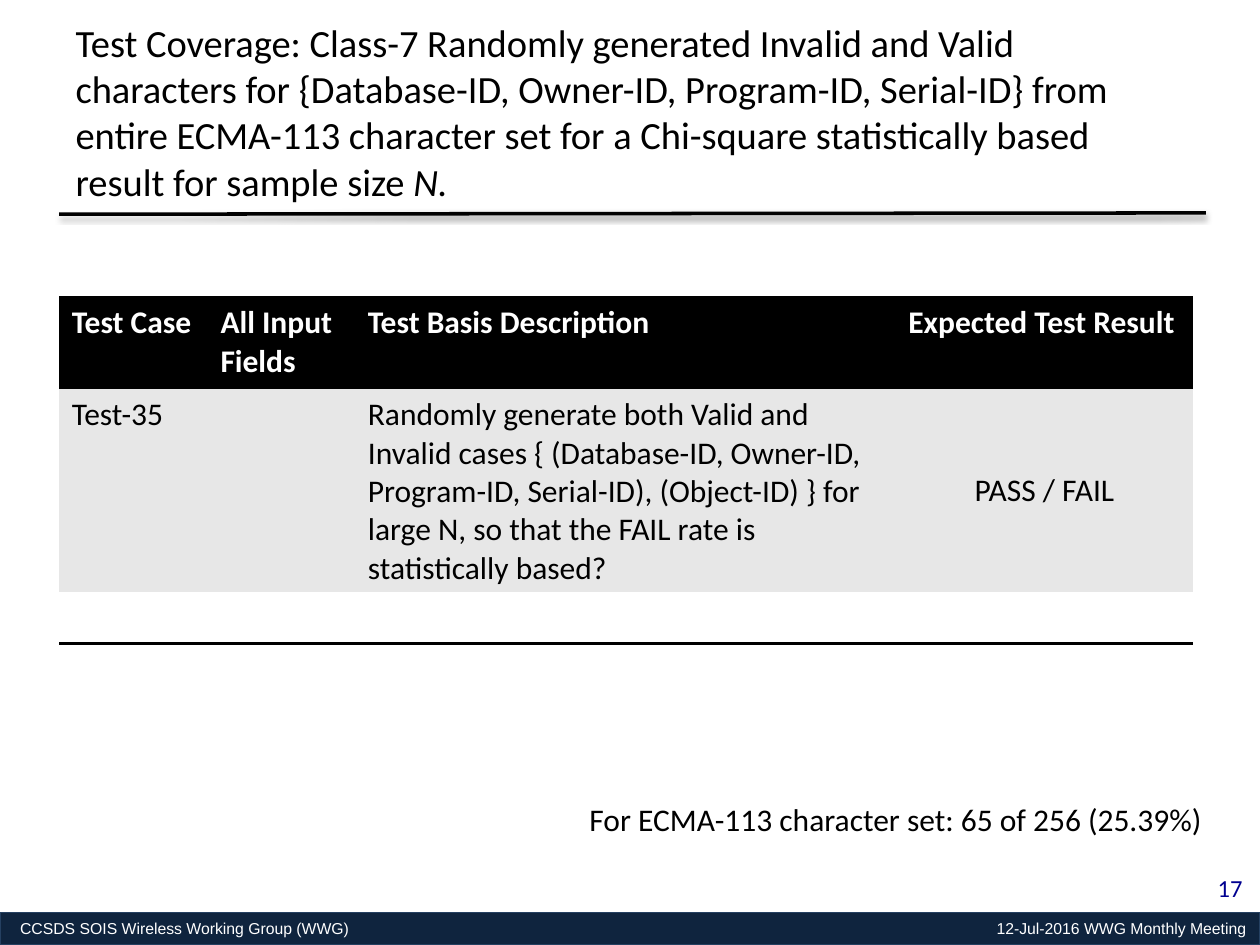
from dataclasses import dataclass

from lxml import etree
from pptx import Presentation
from pptx.dml.color import RGBColor
from pptx.enum import shapes, text
from pptx.oxml import parse_xml
from pptx.oxml.ns import nsdecls, qn
from pptx.util import Inches, Pt

HEX = {"black": "000000", "white": "FFFFFF", "gray": "E7E7E7",
       "navy": "0F243E", "edge": "254061", "blue": "000090"}
NO_GRID = "{2D5ABB26-0587-4C30-8999-92F81FD0307C}"
ALIGN = text.PP_ALIGN
ANCHOR = text.MSO_ANCHOR


@dataclass
class Row:
    height: float
    fill: str
    cells: tuple[str, ...]
    color: str = "black"
    bold: bool = False
    edge: str = ""


COLS = (1.18, 1.17, 4.29, 2.36)
ROWS = (
    Row(0.73, "black", ("Test Case", "All Input Fields", "Test Basis Description",
                        "Expected Test Result"), "white", True, "lnT"),
    Row(1.61, "gray", (
        "Test-35", "",
        "Randomly generate both Valid and Invalid cases { (Database-ID, Owner-ID, "
        "Program-ID, Serial-ID), (Object-ID) } for large N, so that the FAIL rate "
        "is statistically based?",
        "PASS / FAIL")),
    Row(0.41, "white", ("",) * 4, edge="lnB"),
)


def rgb(name: str) -> RGBColor:
    return RGBColor.from_string(HEX[name])


def write(frame, words: str, *, size: float = 18, color: str = "black",
          font: str = "Calibri", bold: bool = False, italic: bool = False,
          align=ALIGN.LEFT):
    """Add a formatted run to the first paragraph of the frame."""
    para = frame.paragraphs[0]
    para.alignment = align
    run = para.add_run()
    run.text = words
    face = run.font
    face.name, face.size = font, Pt(size)
    face.bold, face.italic = bold, italic
    face.color.rgb = rgb(color)
    return para


def add_text(slide, box: tuple[float, ...], words: str, wrap: bool = True, **style) -> None:
    frame = slide.shapes.add_textbox(*map(Inches, box)).text_frame
    frame.word_wrap = wrap
    write(frame, words, **style)


def add_title(slide) -> None:
    title = slide.shapes.title
    title.left, title.top, title.width, title.height = map(Inches, (0.5, 0.08, 9, 1.61))
    frame = title.text_frame
    frame.word_wrap = True
    frame.auto_size = text.MSO_AUTO_SIZE.NONE
    frame.vertical_anchor = ANCHOR.MIDDLE
    write(frame, "Test Coverage: Class-7 Randomly generated Invalid and Valid characters "
          "for {Database-ID, Owner-ID, Program-ID, Serial-ID} from entire ECMA-113 "
          "character set for a Chi-square statistically based result for sample size ",
          size=22)
    write(frame, "N.", size=22, italic=True)


def add_rule(slide) -> None:
    """Draw the line under the title, with its soft shadow."""
    rule = slide.shapes.add_connector(
        shapes.MSO_CONNECTOR.STRAIGHT, *map(Inches, (0.47, 1.7, 9.57, 1.69)))
    rule.line.color.rgb = rgb("black")
    rule.line.width = Pt(2)
    rule._element.spPr.append(parse_xml(
        f'<a:effectLst {nsdecls("a")}><a:outerShdw blurRad="{Pt(3.1)}" dist="{Pt(1.6)}" '
        f'dir="5400000" rotWithShape="0"><a:srgbClr val="{HEX["black"]}">'
        '<a:alpha val="38000"/></a:srgbClr></a:outerShdw></a:effectLst>'))


def add_edge(cell, side: str) -> None:
    cell._tc.get_or_add_tcPr().insert(0, parse_xml(
        f'<a:{side} {nsdecls("a")} w="{Pt(2)}"><a:solidFill>'
        f'<a:srgbClr val="{HEX["black"]}"/></a:solidFill></a:{side}>'))


def add_grid(slide) -> None:
    high = sum(row.height for row in ROWS)
    grid = slide.shapes.add_table(
        len(ROWS), len(COLS), *map(Inches, (0.47, 2.36, sum(COLS), high))).table
    grid.horz_banding = False
    grid._tbl.tblPr.find(qn("a:tableStyleId")).text = NO_GRID
    for col, wide in zip(grid.columns, COLS):
        col.width = Inches(wide)
    for line, row in zip(grid.rows, ROWS):
        line.height = Inches(row.height)
        for cell, words in zip(line.cells, row.cells):
            cell.fill.solid()
            cell.fill.fore_color.rgb = rgb(row.fill)
            if words:
                write(cell.text_frame, words, color=row.color, bold=row.bold)
            if row.edge:
                add_edge(cell, row.edge)
    result = grid.cell(1, 3)
    result.vertical_anchor = ANCHOR.MIDDLE
    result.text_frame.paragraphs[0].alignment = ALIGN.CENTER


def add_footer(slide) -> None:
    """Draw the bar, with a right tab between its two texts."""
    bar = slide.shapes.add_shape(
        shapes.MSO_SHAPE.RECTANGLE, *map(Inches, (0, 7.24, 10, 0.26)))
    bar.shadow.inherit = False
    bar.fill.solid()
    bar.fill.fore_color.rgb = rgb("navy")
    bar.line.color.rgb = rgb("edge")
    bar.line.width = Pt(0.75)
    frame = bar.text_frame
    frame.word_wrap = True
    frame.margin_left, frame.margin_right = Inches(0.16), Inches(0.08)
    frame.margin_top = frame.margin_bottom = Inches(0.05)
    frame.vertical_anchor = ANCHOR.MIDDLE
    para = write(frame, "CCSDS SOIS Wireless Working Group (WWG)\t12-Jul-2016 WWG Monthly Meeting",
                 size=9, font="Arial", color="white")
    tabs = etree.SubElement(para._p.get_or_add_pPr(), qn("a:tabLst"))
    etree.SubElement(tabs, qn("a:tab"), pos=str(Inches(9.73)), algn="r")


def main() -> None:
    deck = Presentation()
    deck.slide_width, deck.slide_height = Inches(10), Inches(7.5)
    slide = deck.slides.add_slide(deck.slide_layouts[5])
    add_footer(slide)
    add_text(slide, (9.3, 6.88, 0.66, 0.35), "17", size=14, color="blue", align=ALIGN.RIGHT)
    add_title(slide)
    add_rule(slide)
    add_grid(slide)
    add_text(slide, (4.58, 6.3, 5.13, 0.4),
             "For ECMA-113 character set: 65 of 256 (25.39%)", wrap=False)
    deck.save("out.pptx")


if __name__ == "__main__":
    main()
